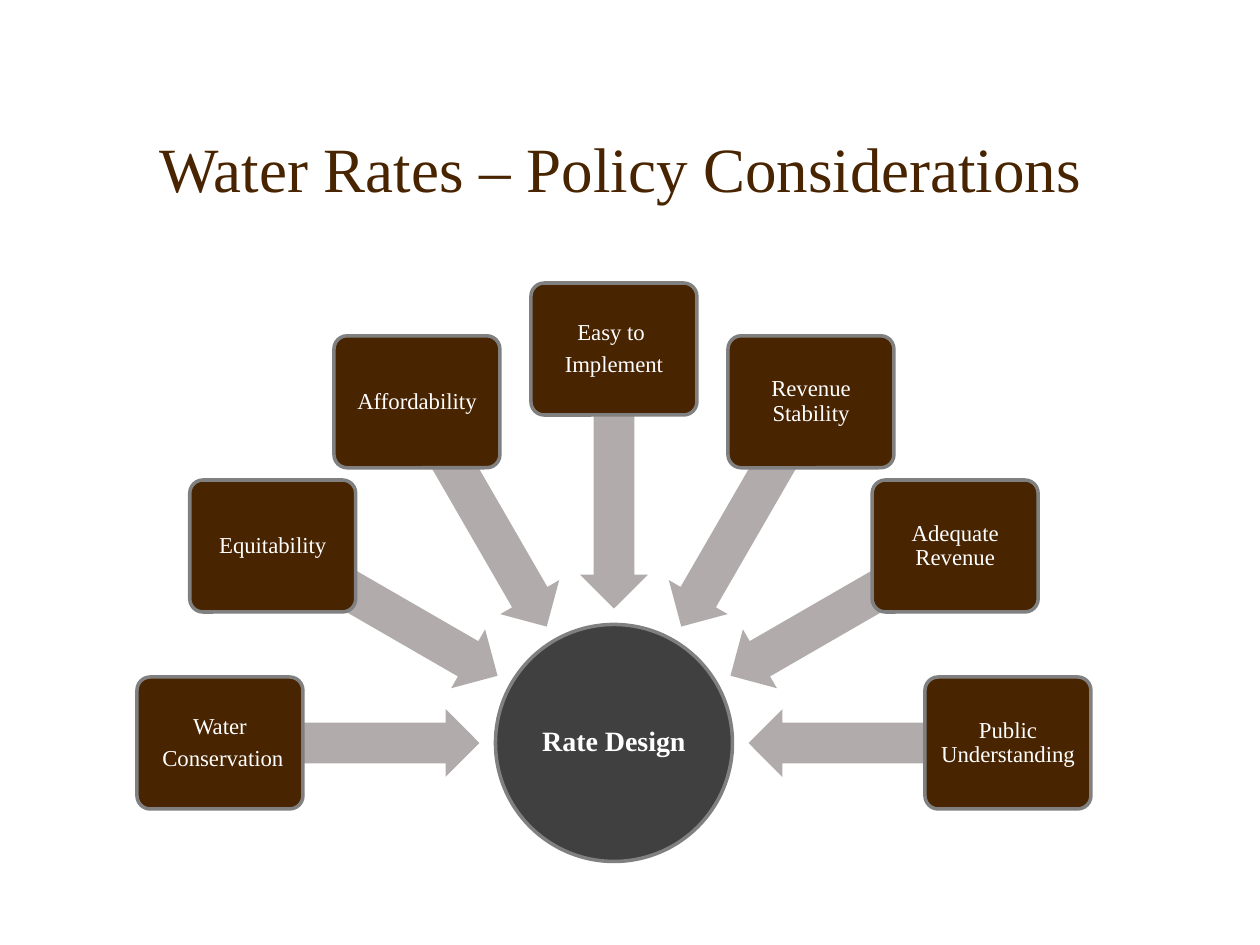
import math
from dataclasses import dataclass

import pptx
import pptx.dml.color
import pptx.enum.shapes
import pptx.enum.text
import pptx.util

PX = 914400 / 126  # EMU in one px
FONT = "Times New Roman"
BROWN, DARK, GREY, ARROW, WHITE = "482400", "404040", "808080", "B1ACAB", "FFFFFF"
SHAPE = pptx.enum.shapes.MSO_SHAPE
ALIGN = pptx.enum.text.PP_ALIGN
ANCHOR = pptx.enum.text.MSO_ANCHOR


@dataclass
class Node:
    """A shape centred at a distance and angle from the hub centre."""
    kind: int
    width: int
    height: int
    radius: int = 0
    angle: int = 0


# Hub centre and the radial layout, in px
HUB_X, HUB_Y = 614, 743
HUB_SIZE = 237
BOX_W, BOX_H, BOX_RADIUS = 166, 132, 394
ARROW_W, ARROW_H, ARROW_RADIUS = 261, 68, 265
START_ANGLE, STEP = 180, 30

CONSIDERATIONS = [
    ["Water", " Conservation"],
    ["Equitability"],
    ["Affordability"],
    ["Easy to ", "Implement"],
    ["Revenue Stability"],
    ["Adequate Revenue"],
    ["Public Understanding"],
]


def px(n: float) -> pptx.util.Emu:
    return pptx.util.Emu(round(n * PX))


def color(value: str) -> pptx.dml.color.RGBColor:
    return pptx.dml.color.RGBColor.from_string(value)


def set_attrs(obj, values: dict) -> None:
    for name, value in values.items():
        setattr(obj, name, value)


def add_node(shapes, node: Node, fill: str, outlined: bool = True):
    """Draw a node, with or without the grey outline."""
    a = math.radians(node.angle)
    x = HUB_X + node.radius * math.cos(a) - node.width / 2
    y = HUB_Y + node.radius * math.sin(a) - node.height / 2
    sp = shapes.add_shape(node.kind, px(x), px(y), px(node.width), px(node.height))
    sp.shadow.inherit = False
    sp.fill.solid()
    sp.fill.fore_color.rgb = color(fill)
    if outlined:
        sp.line.color.rgb = color(GREY)
        sp.line.width = pptx.util.Pt(2)
    else:
        sp.line.fill.background()
    return sp


def add_label(sp, lines: list[str], size: int, inset: int, bold: bool = False) -> None:
    """Write centred white paragraphs in a shape."""
    tf = sp.text_frame
    margins = {f"margin_{side}": px(inset) for side in ("left", "top", "right", "bottom")}
    set_attrs(tf, {"word_wrap": True, "vertical_anchor": ANCHOR.MIDDLE, **margins})
    for i, line in enumerate(lines):
        p = tf.paragraphs[0] if i == 0 else tf.add_paragraph()
        set_attrs(p, {"alignment": ALIGN.CENTER, "line_spacing": 0.9,
                      "space_after": pptx.util.Pt(0.35 * size)})
        r = p.add_run()
        r.text = line
        set_attrs(r.font, {"name": FONT, "size": pptx.util.Pt(size), "bold": bold})
        r.font.color.rgb = color(WHITE)


def add_title(slide, text: str) -> None:
    sp = slide.shapes.title
    set_attrs(sp, {"left": px(147), "top": px(53), "width": px(1071), "height": px(158)})
    tf = sp.text_frame
    set_attrs(tf, {"auto_size": pptx.enum.text.MSO_AUTO_SIZE.NONE,
                   "vertical_anchor": ANCHOR.BOTTOM, "word_wrap": True})
    p = tf.paragraphs[0]
    p.alignment = ALIGN.LEFT
    r = p.add_run()
    r.text = text
    set_attrs(r.font, {"name": FONT, "size": pptx.util.Pt(36)})
    r.font.color.rgb = color(BROWN)


def main() -> None:
    prs = pptx.Presentation()
    set_attrs(prs, {"slide_width": px(1260), "slide_height": px(945)})
    slide = prs.slides.add_slide(prs.slide_layouts[5])
    add_title(slide, "Water Rates – Policy Considerations")

    # Hub
    shapes = slide.shapes.add_group_shape().shapes
    hub = add_node(shapes, Node(SHAPE.OVAL, HUB_SIZE, HUB_SIZE), DARK)
    add_label(hub, ["Rate Design"], 16, 1, bold=True)

    # Boxes around the hub, each with an arrow pointing inwards
    for i, lines in enumerate(CONSIDERATIONS):
        angle = START_ANGLE + i * STEP
        arrow = add_node(shapes, Node(SHAPE.LEFT_ARROW, ARROW_W, ARROW_H, ARROW_RADIUS, angle),
                         ARROW, outlined=False)
        arrow.rotation = angle % 360
        arrow.adjustments[0] = 0.6
        arrow.adjustments[1] = 0.5
        box = add_node(shapes, Node(SHAPE.ROUNDED_RECTANGLE, BOX_W, BOX_H, BOX_RADIUS, angle), BROWN)
        box.adjustments[0] = 0.1
        add_label(box, lines, 13, 4)

    prs.save("out.pptx")


if __name__ == "__main__":
    main()
